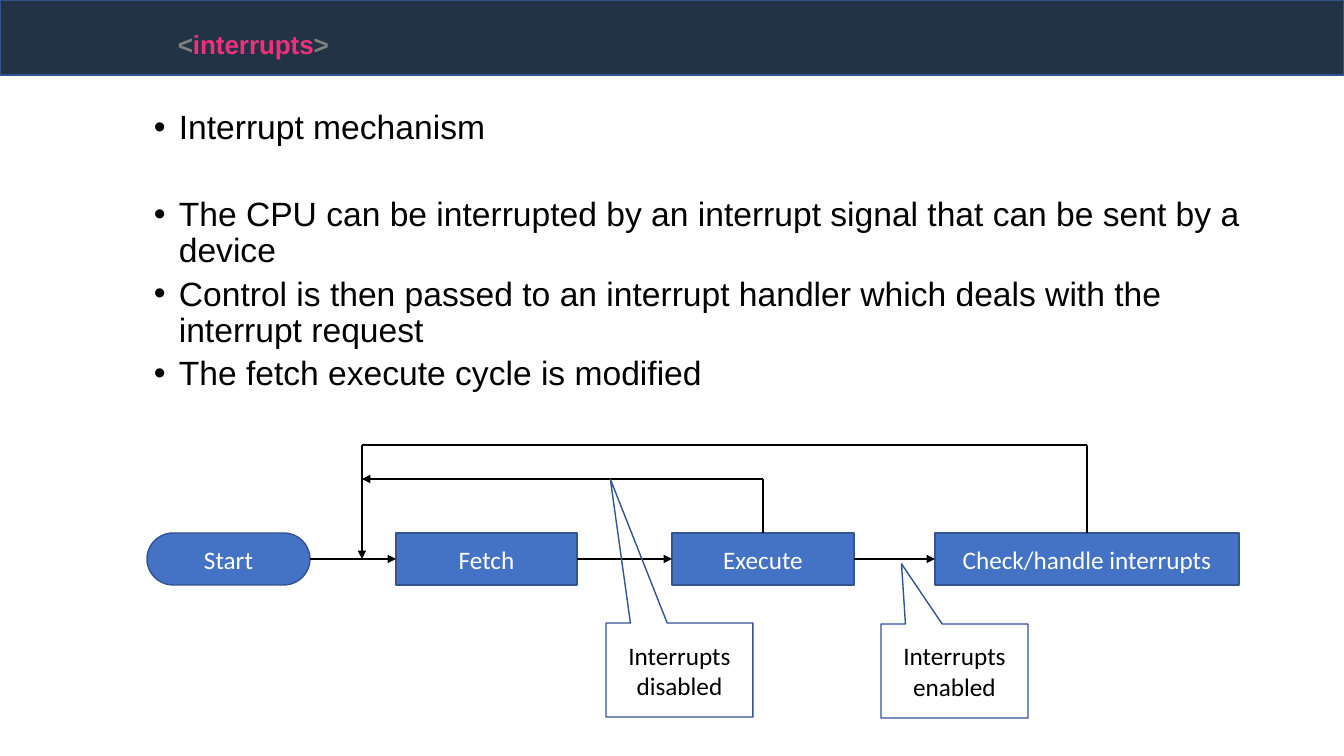
from lxml import etree
from pptx import Presentation
from pptx.dml.color import RGBColor
from pptx.enum.shapes import MSO_CONNECTOR, MSO_SHAPE
from pptx.enum.text import MSO_ANCHOR, PP_ALIGN
from pptx.oxml.ns import qn
from pptx.util import Pt

EMU_PER_PX = 914400 / 100.8
STRAIGHT = MSO_CONNECTOR.STRAIGHT
RECTANGLE = MSO_SHAPE.RECTANGLE
PROCESS = MSO_SHAPE.FLOWCHART_PROCESS
TERMINATOR = MSO_SHAPE.FLOWCHART_TERMINATOR
CALLOUT = MSO_SHAPE.RECTANGULAR_CALLOUT
CENTER = PP_ALIGN.CENTER
MIDDLE = MSO_ANCHOR.MIDDLE
TOP, LEFT, RIGHT = 0, 1, 3

NAVY, BLUE, BLUE_EDGE = "223346", "4472C4", "325491"
BLACK, WHITE, GRAY, PINK = "000000", "FFFFFF", "808080", "F1307C"

STEP_TOP, STEP_HEIGHT = 533, 52
FLOW_Y = STEP_TOP + STEP_HEIGHT // 2
RETURN_X = 362
STEPS = [
    ("Start", TERMINATOR, 147, 163),
    ("Fetch", PROCESS, 396, 181),
    ("Execute", PROCESS, 672, 182),
    ("Check/handle interrupts", PROCESS, 935, 304),
]
# text, space before in points
BULLETS = [
    ("Interrupt mechanism", 0),
    ("The CPU can be interrupted by an interrupt signal that can be sent by a device", 36),
    ("Control is then passed to an interrupt handler which deals with the interrupt request", 5),
    ("The fetch execute cycle is modified", 5),
]


def px(length):
    return round(length * EMU_PER_PX)


def color(value):
    return RGBColor.from_string(value)


def set_font(paragraph, name, size, font_color=None, bold=False):
    font = paragraph.font
    font.name, font.size, font.bold = name, Pt(size), bold
    if font_color:
        font.color.rgb = color(font_color)


def add_box(slide, kind, box, fill=None, text="", text_color=WHITE):
    """Add an outlined preset shape, unfilled when fill is None, with centred text."""
    shape = slide.shapes.add_shape(kind, *map(px, box))
    shape.shadow.inherit = False
    if fill:
        shape.fill.solid()
        shape.fill.fore_color.rgb = color(fill)
    else:
        shape.fill.background()
    shape.line.color.rgb = color(BLUE_EDGE)
    shape.line.width = Pt(1)
    if text:
        frame = shape.text_frame
        frame.word_wrap = True
        frame.vertical_anchor = MIDDLE
        paragraph = frame.paragraphs[0]
        paragraph.text = text
        paragraph.alignment = CENTER
        set_font(paragraph, "Calibri", 18, text_color)
    return shape


def add_callout(slide, text, left, top, tip):
    width, height = 147, 94
    callout = add_box(slide, CALLOUT, (left, top, width, height), None, text, BLACK)
    callout.adjustments[0] = round((tip[0] - left) / width - 0.5, 2)
    callout.adjustments[1] = round((tip[1] - top) / height - 0.5, 2)


def add_line(slide, start, end, arrow=True):
    line = slide.shapes.add_connector(STRAIGHT, *map(px, start + end))
    line.line.color.rgb = color(BLACK)
    line.line.width = Pt(1.5)
    if arrow:
        outline = line.line._get_or_add_ln()
        etree.SubElement(outline, qn("a:tailEnd"), type="triangle")
    etree.SubElement(line._element.spPr, qn("a:effectLst"))
    return line


def add_return_path(slide, step, level, arrow):
    """Lead from the top of a step up to a level, then left to the return line."""
    middle = round((step.left + step.width / 2) / EMU_PER_PX)
    rise = add_line(slide, (middle, STEP_TOP), (middle, level), False)
    rise.begin_connect(step, TOP)
    add_line(slide, (middle, level), (RETURN_X, level), arrow)


def add_title(slide):
    box = slide.shapes.add_textbox(px(168), px(18), px(175), px(64))
    box.text_frame.word_wrap = False
    paragraph = box.text_frame.paragraphs[0]
    for text, run_color in (("<", GRAY), ("interrupts", PINK), (">", GRAY)):
        run = paragraph.add_run()
        run.text = text
        run.font.color.rgb = color(run_color)
        run.font._element.set("baseline", "30000")
    set_font(paragraph, "Arial", 32, bold=True)


def add_bullets(slide):
    frame = slide.shapes.add_textbox(px(93), px(106), px(1175), px(300)).text_frame
    frame.word_wrap = True
    for index, (text, space_before) in enumerate(BULLETS):
        paragraph = frame.add_paragraph() if index else frame.paragraphs[0]
        paragraph.text = text
        paragraph.line_spacing = 0.9
        paragraph.space_before = Pt(space_before)
        properties = paragraph._p.get_or_add_pPr()
        properties.set("marL", str(px(76)))
        properties.set("indent", str(px(-25)))
        etree.SubElement(properties, qn("a:buFont"), typeface="Arial")
        etree.SubElement(properties, qn("a:buChar"), char="•")
        set_font(paragraph, "Arial", 24, BLACK)


def add_flow(slide):
    steps = [
        add_box(slide, kind, (left, STEP_TOP, width, STEP_HEIGHT), BLUE, text)
        for text, kind, left, width in STEPS
    ]
    for before, after in zip(steps, steps[1:]):
        arrow = add_line(slide, (0, FLOW_Y), (RETURN_X, FLOW_Y))
        arrow.begin_connect(before, RIGHT)
        arrow.end_connect(after, LEFT)
    execute, check = steps[2:]
    add_return_path(slide, check, 445, False)
    add_line(slide, (RETURN_X, 445), (RETURN_X, FLOW_Y))
    add_return_path(slide, execute, 479, True)


def main():
    presentation = Presentation()
    presentation.slide_width, presentation.slide_height = px(1344), px(756)
    slide = presentation.slides.add_slide(presentation.slide_layouts[6])
    add_box(slide, RECTANGLE, (0, 0, 1344, 75), NAVY)
    add_bullets(slide)
    add_title(slide)
    add_flow(slide)
    add_callout(slide, "Interrupts enabled", 881, 624, (901, 564))
    add_callout(slide, "Interrupts disabled", 606, 623, (611, 479))
    presentation.save("out.pptx")


if __name__ == "__main__":
    main()
